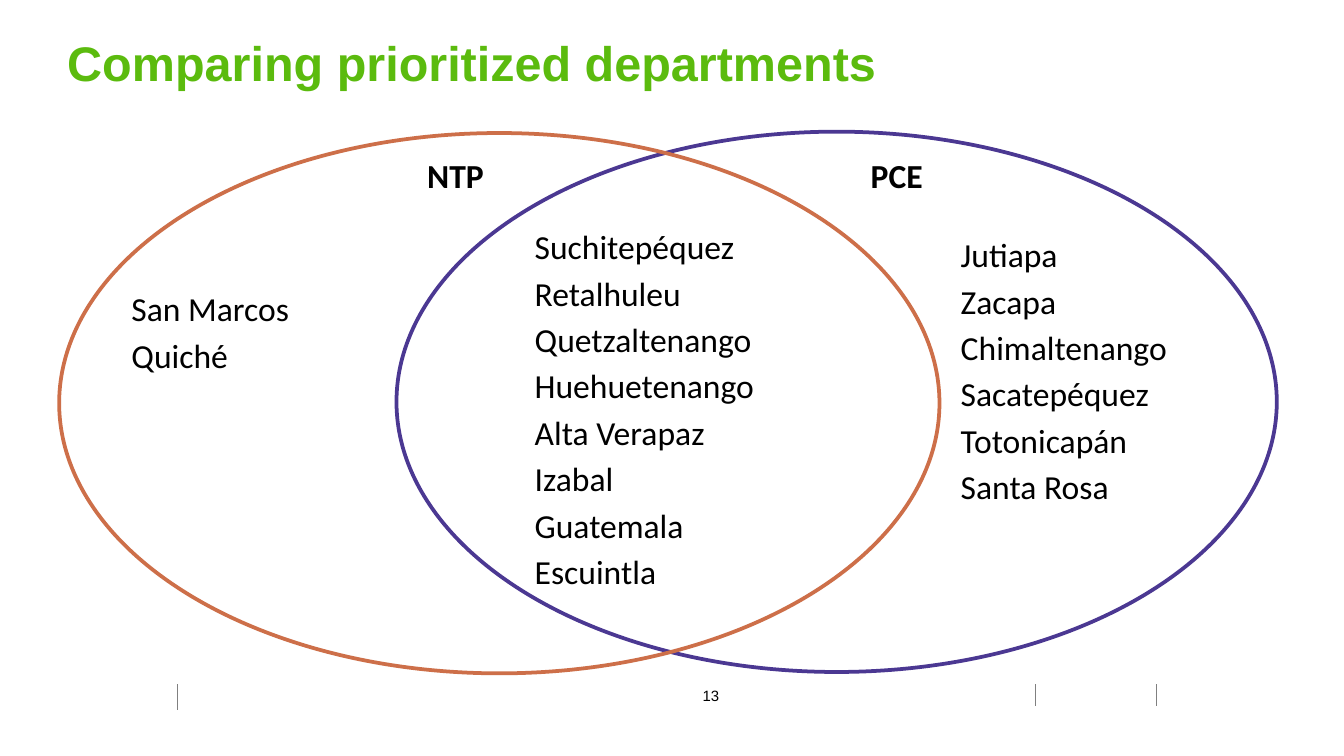
from dataclasses import dataclass
from lxml.etree import SubElement
from pptx import Presentation
from pptx.dml.color import RGBColor as RGB
from pptx.enum.shapes import MSO_CONNECTOR as LINE, MSO_SHAPE as SHAPE
from pptx.enum.text import MSO_ANCHOR as ANCHOR, MSO_AUTO_SIZE as FIT, PP_ALIGN as ALIGN
from pptx.oxml.ns import qn
from pptx.util import Inches, Pt


@dataclass(frozen=True)
class Theme:
    green: RGB = RGB(0x5B, 0xBB, 0x0E)
    orange: RGB = RGB(0xCD, 0x6F, 0x49)
    purple: RGB = RGB(0x4B, 0x38, 0x92)
    gray: RGB = RGB(0x80, 0x80, 0x80)
    black: RGB = RGB(0, 0, 0)
    head: str = "Arial"
    body: str = "Calibri"
    title: int = 26
    text: int = 18
    small: int = 8
    ring: float = 2
    hair: float = 0.25
    space: float = 1.15


THEME = Theme()


def add_run(para, text, font, size, color, bold=False):
    run = para.add_run()
    run.text = text
    run.font.name, run.font.size = font, Pt(size)
    run.font.color.rgb, run.font.bold = color, bold


def add_title(slide, box, text):
    title = slide.shapes.title
    title.left, title.top, title.width, title.height = map(Inches, box)
    frame = title.text_frame
    frame.word_wrap, frame.auto_size = True, FIT.NONE
    frame.vertical_anchor = ANCHOR.MIDDLE
    para = frame.paragraphs[0]
    para.alignment = ALIGN.LEFT
    add_run(para, text, THEME.head, THEME.title, THEME.green, True)


def add_list(slide, left, top, width, names, bold=False):
    # Height follows the number of lines
    height = 0.1 + 0.35 * len(names)
    frame = slide.shapes.add_textbox(*map(Inches, (left, top, width, height))).text_frame
    frame.word_wrap = True
    for i, name in enumerate(names):
        para = frame.add_paragraph() if i else frame.paragraphs[0]
        para.line_spacing = THEME.space
        add_run(para, name, THEME.body, THEME.text, THEME.black, bold)


def add_ring(slide, box, color):
    ring = slide.shapes.add_shape(SHAPE.OVAL, *map(Inches, box))
    ring.shadow.inherit = False
    ring.fill.background()
    ring.line.color.rgb, ring.line.width = color, Pt(THEME.ring)


def add_venn(slide, box):
    left, top, width, height = box
    size = 6.55, height
    # Rings meet the two sides of the box
    add_ring(slide, (left + width - size[0], top, *size), THEME.purple)
    add_ring(slide, (left, top + 0.01, *size), THEME.orange)
    # Shared departments, then those of one side only
    add_list(slide, left + 3.44, top + 0.61, 2.39, [
        "Suchitepéquez", "Retalhuleu", "Quetzaltenango", "Huehuetenango",
        "Alta Verapaz", "Izabal", "Guatemala", "Escuintla"])
    add_list(slide, left + 0.44, top + 1.07, 1.69, ["San Marcos", "Quiché"])
    add_list(slide, left + 6.61, top + 0.67, 2.39, [
        "Jutiapa", "Zacapa", "Chimaltenango", "Sacatepéquez",
        "Totonicapán", "Santa Rosa"])
    # Ring labels
    for name, shift in (("NTP", 2.64), ("PCE", 5.94)):
        add_list(slide, left + shift, top + 0.08, 1.28, [name], True)


def add_footer(slide, box, number):
    left, top, width, height = box
    # Upright hairlines
    for shift, drop in ((1.32, 0.19), (7.7, 0.16), (8.6, 0.16)):
        x, y = left + shift, top + 0.03
        line = slide.shapes.add_connector(
            LINE.STRAIGHT, *map(Inches, (x, y, x, y + drop)))
        line.line.color.rgb, line.line.width = THEME.gray, Pt(THEME.hair)
        SubElement(line._element.spPr, qn("a:effectLst"))
    # Page number
    frame = slide.shapes.add_textbox(
        *map(Inches, (left + 5.12, top, 0.34, height))).text_frame
    frame.word_wrap = False
    para = frame.paragraphs[0]
    para.alignment = ALIGN.CENTER
    add_run(para, number, THEME.head, THEME.small, THEME.black)


def main():
    deck = Presentation()
    # Widescreen, 16 to 9
    deck.slide_width, deck.slide_height = Inches(10), Inches(10) * 9 // 16
    slide = deck.slides.add_slide(deck.slide_layouts.get_by_name("Title Only"))
    add_footer(slide, (0, 5.06, 10, 0.24), "13")
    add_title(slide, (0.4, 0.19, 8.96, 0.54), "Comparing prioritized departments")
    add_venn(slide, (0.44, 0.98, 9.06, 4.02))
    deck.save("out.pptx")


if __name__ == "__main__":
    main()
